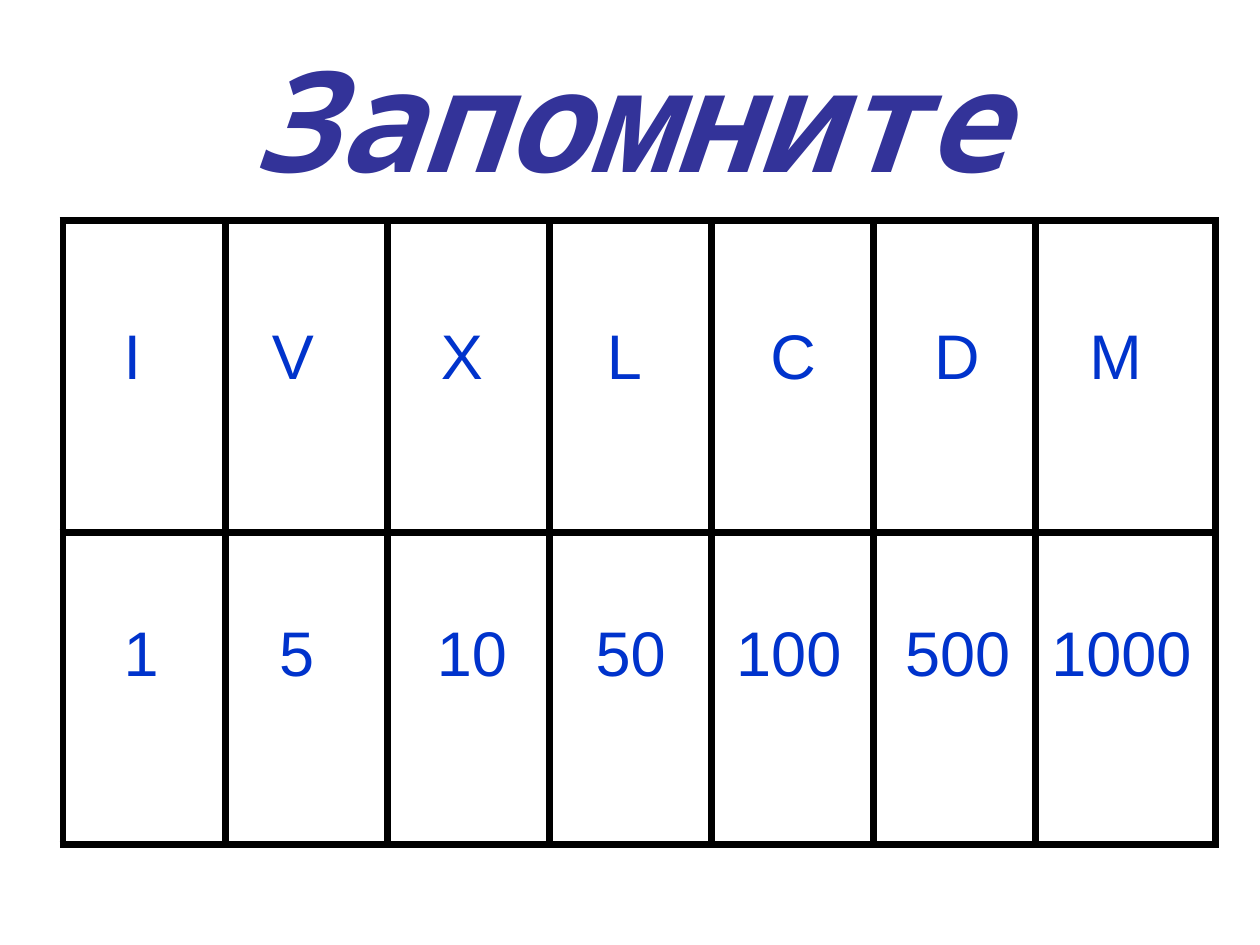
"""Slide with a table of Roman numerals and their values."""
from lxml import etree
from pptx import Presentation, util as u
from pptx.dml.color import RGBColor
from pptx.enum import text
from pptx.oxml.ns import qn

Pt = u.Pt
COLORS = {"title": "333399", "label": "0033CC", "border": "000000"}
TITLE = {"size": Pt(80), "name": "Noto Sans Mono", "bold": True, "italic": True}
LABEL = {"size": Pt(36), "name": "Arial"}
ROWS = [
    (173.5, [("I", 70.6, 5.8), ("V", 144.7, 45.4), ("X", 247, 33.8), ("L", 342.7, 28.1),
             ("C", 433.4, 39.6), ("D", 529.9, 33.8), ("M", 620.6, 33.8)]),
    (343.4, [("1", 70.6, 17.3), ("5", 155.5, 28.1), ("10", 241.2, 56.9), ("50", 331.9, 56.9),
             ("100", 416.9, 67.7), ("500", 513.4, 67.7), ("1000", 598.3, 85)]),
]


def add_text(s, words, box, style, color, frame):
    sp = s.shapes.add_textbox(*[Pt(v) for v in box])
    tf = sp.text_frame
    for key, value in frame.items():
        setattr(tf, key, value)
    p = tf.paragraphs[0]
    p.alignment = text.PP_ALIGN.CENTER
    r = p.add_run()
    r.text = words
    for key, value in style.items():
        setattr(r.font, key, value)
    r.font.color.rgb = RGBColor.from_string(COLORS[color])


def set_borders(cell, color, width):
    pr = cell._tc.get_or_add_tcPr()
    for i, side in enumerate(("lnL", "lnR", "lnT", "lnB")):
        ln = etree.Element(qn("a:" + side), w=str(Pt(width)))
        fill = etree.SubElement(ln, qn("a:solidFill"))
        etree.SubElement(fill, qn("a:srgbClr"), val=color)
        pr.insert(i, ln)


prs = Presentation()
prs.slide_width, prs.slide_height = Pt(720), Pt(540)
s = prs.slides.add_slide(prs.slide_layouts[6])

add_text(s, "Запомните", (36, 21.6, 648, 90), TITLE, "title",
         {"word_wrap": True, "vertical_anchor": text.MSO_ANCHOR.MIDDLE})

table = s.shapes.add_table(2, 7, Pt(36), Pt(126), Pt(658.8), Pt(356.4)).table
table.first_row = table.horz_banding = False
for row in table.rows:
    row.height = Pt(178.2)
for i, column in enumerate(table.columns):
    column.width = Pt(103 if i == 6 else 92.63)
for cell in table.iter_cells():
    cell.fill.background()
    set_borders(cell, COLORS["border"], 4.5)

frame = {"word_wrap": False, "margin_left": 0, "margin_right": 0,
         "margin_top": Pt(7.2), "vertical_anchor": text.MSO_ANCHOR.TOP}
for top, labels in ROWS:
    for words, left, width in labels:
        add_text(s, words, (left, top, width, 62.6), LABEL, "label", frame)

prs.save("out.pptx")
